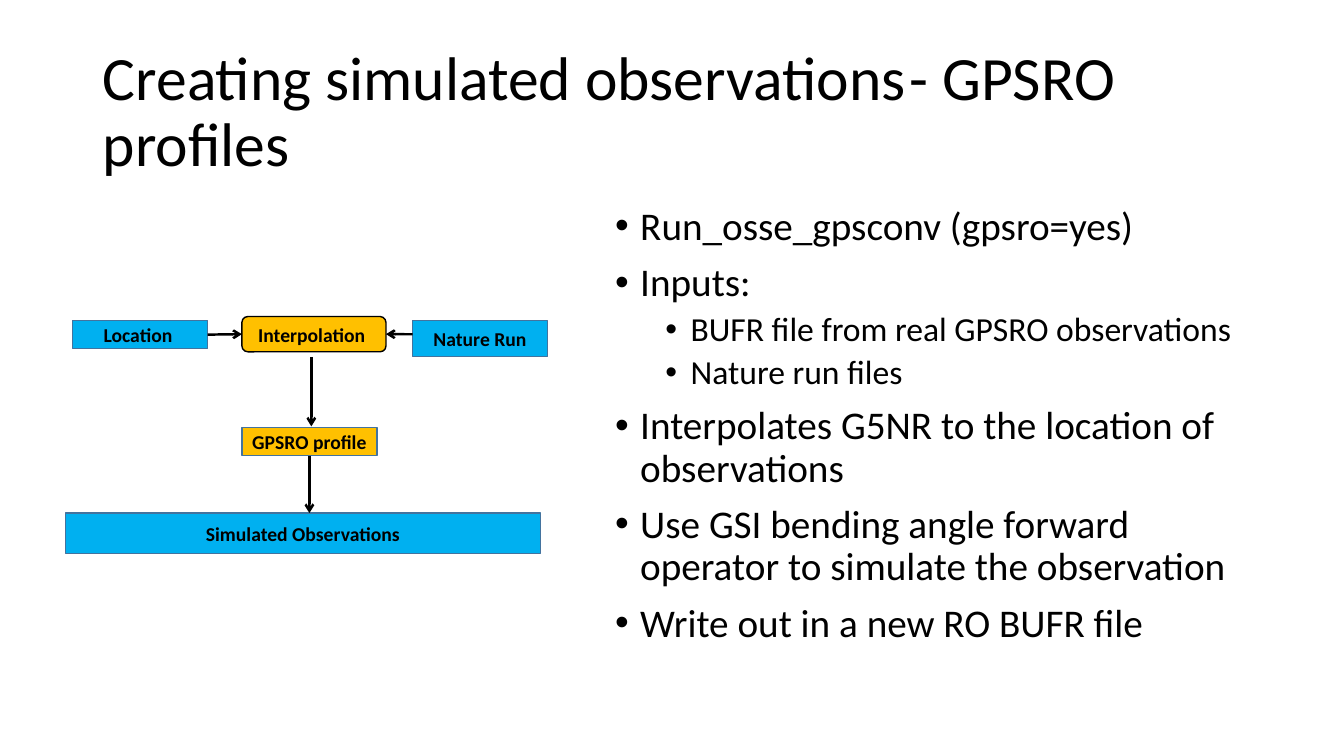
from lxml import etree
from pptx import Presentation
from pptx.dml.color import RGBColor
from pptx.enum.shapes import MSO_CONNECTOR, MSO_SHAPE
from pptx.enum.text import MSO_ANCHOR, MSO_AUTO_SIZE, PP_ALIGN
from pptx.oxml.ns import qn
from pptx.util import Inches, Pt

RECT, ROUNDED = MSO_SHAPE.RECTANGLE, MSO_SHAPE.ROUNDED_RECTANGLE
STRAIGHT = MSO_CONNECTOR.STRAIGHT
MIDDLE, TOP = MSO_ANCHOR.MIDDLE, MSO_ANCHOR.TOP
LEFT, CENTER = PP_ALIGN.LEFT, PP_ALIGN.CENTER
NO_FIT = MSO_AUTO_SIZE.NONE

BLACK = RGBColor(0x00, 0x00, 0x00)
BLUE = RGBColor(0x00, 0xB0, 0xF0)
AMBER = RGBColor(0xFF, 0xC0, 0x00)
EDGE = RGBColor(0x43, 0x73, 0x9E)
FONT = "Calibri"

TITLE = "Creating simulated observations\t- GPSRO profiles"
BULLETS = [
    (0, "Run_osse_gpsconv (gpsro=yes)"),
    (0, "Inputs:"),
    (1, "BUFR file from real GPSRO observations"),
    (1, "Nature run files"),
    (0, "Interpolates G5NR to the location of observations"),
    (0, "Use GSI bending angle forward operator to simulate the observation"),
    (0, "Write out in a new RO BUFR file"),
]
LEVELS = [(28, 10, 0.25), (24, 5, 0.75)]

TITLE_BOX = (0.92, 0.4, 11.5, 1.45)
BODY_BOX = (6, 2, 6.42, 4.76)
FLOW_BOX = (0.65, 3.14, 4.78, 2.35)

NODES = {
    "Nature Run": (RECT, BLUE, EDGE, (72, 1.7, 28, 15.3)),
    "Interpolation ": (ROUNDED, AMBER, BLACK, (36.6, 0, 29.9, 14.9)),
    "Location ": (RECT, BLUE, EDGE, (1.5, 1.7, 28, 11.9)),
    "GPSRO profile": (RECT, AMBER, EDGE, (36.6, 46.8, 28, 11.9)),
    "Simulated Observations": (RECT, BLUE, EDGE, (0, 83, 98.5, 17)),
}
ARROWS = [
    ((72, 7.5), (66.5, 7.5), None, ("Interpolation ", 3)),
    ((29.5, 7.5), (36.6, 7.5), ("Location ", 3), ("Interpolation ", 1)),
    ((51, 17), (51, 46.4), None, None),
    ((50.6, 59.1), (50.6, 83), ("GPSRO profile", 2), None),
]


def add_run(p, text, size, bold=False):
    """Add one formatted run to a paragraph."""
    r = p.add_run()
    r.text = text
    r.font.name, r.font.size, r.font.bold = FONT, Pt(size), bold
    r.font.color.rgb = BLACK


def place(sp, box, anchor):
    """Move a placeholder into a box and return its text frame."""
    sp.left, sp.top, sp.width, sp.height = map(Inches, box)
    tf = sp.text_frame
    tf.auto_size, tf.word_wrap, tf.vertical_anchor = NO_FIT, True, anchor
    return tf


def fill_title(sp, box):
    """Write the slide title."""
    p = place(sp, box, MIDDLE).paragraphs[0]
    p.alignment, p.line_spacing = LEFT, 0.9
    add_run(p, TITLE, 44)


def fill_body(sp, box):
    """Write the bulleted list."""
    tf = place(sp, box, TOP)
    for i, (level, text) in enumerate(BULLETS):
        size, before, indent = LEVELS[level]
        p = tf.add_paragraph() if i else tf.paragraphs[0]
        p.level, p.line_spacing, p.space_before = level, 0.9, Pt(before)
        pPr = p._p.get_or_add_pPr()
        pPr.set("marL", str(Inches(indent)))
        pPr.set("indent", str(Inches(-0.25)))
        etree.SubElement(pPr, qn("a:buFont")).set("typeface", "Arial")
        etree.SubElement(pPr, qn("a:buChar")).set("char", "•")
        add_run(p, text, size)


def add_node(s, kind, fill, edge, box, text):
    """Draw one labelled step of the flow."""
    sp = s.shapes.add_shape(kind, *box)
    sp.shadow.inherit = False
    sp.fill.solid()
    sp.fill.fore_color.rgb = fill
    sp.line.color.rgb, sp.line.width = edge, Pt(1)
    tf = sp.text_frame
    tf.word_wrap, tf.vertical_anchor = True, MIDDLE
    tf.margin_left = tf.margin_right = Inches(0.05)
    p = tf.paragraphs[0]
    p.alignment = CENTER
    add_run(p, text, 14, True)
    return sp


def add_arrow(s, start, end):
    """Draw an arrow between two points."""
    c = s.shapes.add_connector(STRAIGHT, *start, *end)
    c.line.color.rgb, c.line.width = BLACK, Pt(1.75)
    etree.SubElement(c.line._get_or_add_ln(), qn("a:tailEnd")).set("type", "arrow")
    etree.SubElement(c._element.spPr, qn("a:effectLst"))
    return c


def draw_flow(s, box):
    """Draw the flow chart on a grid of 100 columns and rows in a box."""
    left, top, width, height = box

    def size(cols, rows):
        return Inches(width * cols / 100), Inches(height * rows / 100)

    def point(col, row):
        x, y = size(col, row)
        return Inches(left) + x, Inches(top) + y

    nodes = {}
    for text, (kind, fill, edge, (col, row, cols, rows)) in NODES.items():
        cell = point(col, row) + size(cols, rows)
        nodes[text] = add_node(s, kind, fill, edge, cell, text)
    for start, end, source, target in ARROWS:
        c = add_arrow(s, point(*start), point(*end))
        if source:
            c.begin_connect(nodes[source[0]], source[1])
        if target:
            c.end_connect(nodes[target[0]], target[1])


def main():
    """Build and save the slide."""
    prs = Presentation()
    prs.slide_width, prs.slide_height = Inches(13.33), Inches(7.5)
    s = prs.slides.add_slide(prs.slide_layouts[1])
    fill_title(s.shapes.title, TITLE_BOX)
    fill_body(s.placeholders[1], BODY_BOX)
    draw_flow(s, FLOW_BOX)
    prs.save("out.pptx")


if __name__ == "__main__":
    main()
